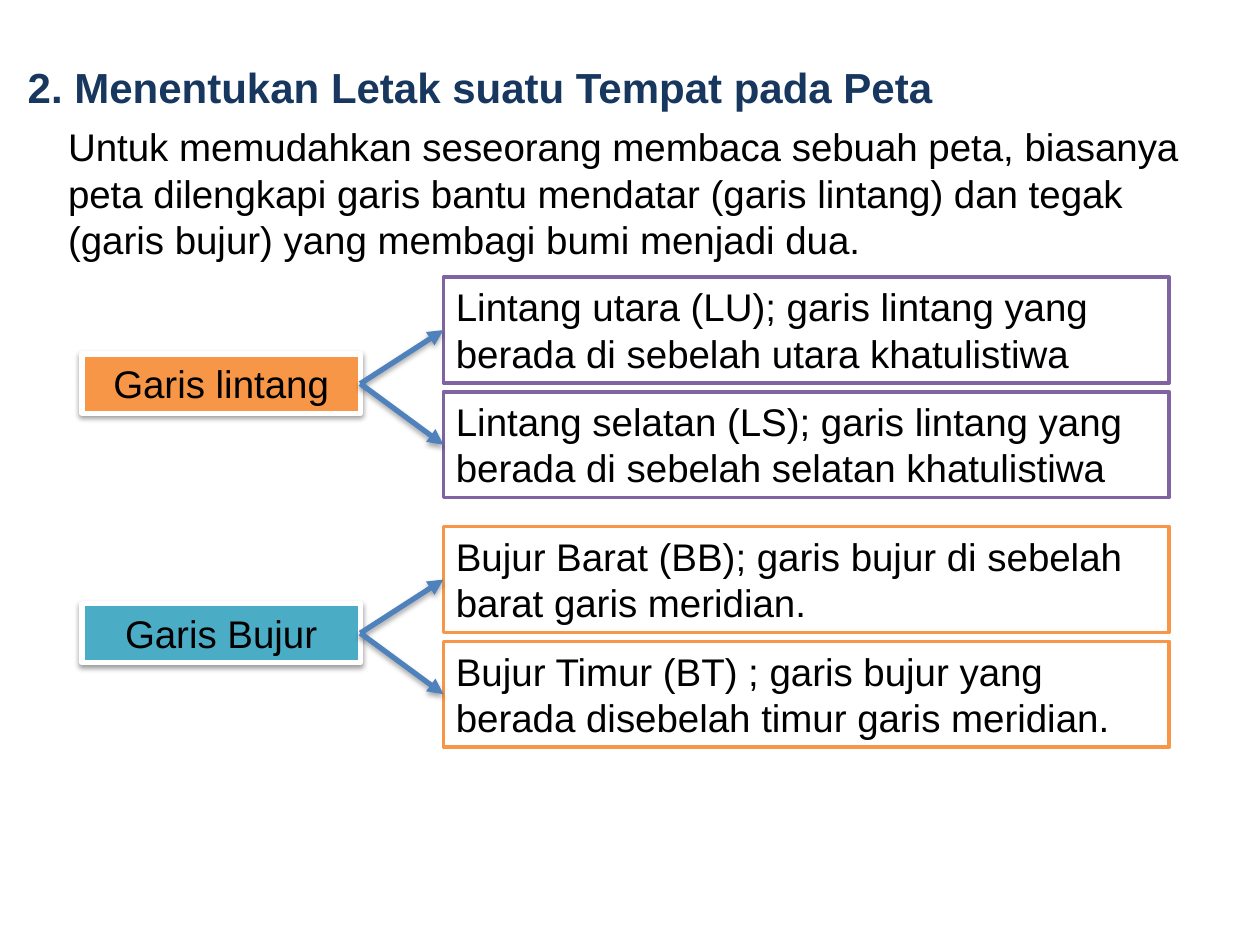
from lxml.etree import SubElement
from pptx import Presentation
from pptx.dml.color import RGBColor
from pptx.enum.shapes import MSO_CONNECTOR, MSO_SHAPE
from pptx.enum.text import MSO_ANCHOR, MSO_AUTO_SIZE, PP_ALIGN
from pptx.oxml.ns import qn
from pptx.util import Inches, Pt

COLORS = {
    "title": "17375E", "text": "000000", "white": "FFFFFF", "arrow": "4F81BD",
    "purple": "8064A2", "orange": "F79646", "teal": "4BACC6", "shadow": "000000",
}
FONT = "Arial"
LABEL_LEFT, LABEL_WIDTH, LABEL_HEIGHT = 0.65, 2.21, 0.47
BOX_LEFT, BOX_WIDTH, BOX_HEIGHT = 3.52, 5.76, 0.84
BOX_STEP = 0.91      # from one definition box to the next
LABEL_OFFSET = 0.61  # from the top of a group to its label

# Top, label, label colour, box border colour, definitions
GROUPS = [
    (2.2, "Garis lintang", "orange", "purple",
     ["Lintang utara (LU); garis lintang yang berada di sebelah utara khatulistiwa",
      "Lintang selatan (LS); garis lintang yang berada di sebelah selatan khatulistiwa"]),
    (4.18, "Garis Bujur", "teal", "orange",
     ["Bujur Barat (BB); garis bujur di sebelah barat garis meridian.",
      "Bujur Timur (BT) ; garis bujur yang berada disebelah timur garis meridian."]),
]


def rgb(name):
    return RGBColor.from_string(COLORS[name])


def write_text(shape, text, size=22, color="text", bold=False, align=PP_ALIGN.LEFT):
    text_frame = shape.text_frame
    text_frame.text = text
    text_frame.word_wrap = True
    text_frame.auto_size = MSO_AUTO_SIZE.NONE
    text_frame.vertical_anchor = MSO_ANCHOR.TOP
    paragraph = text_frame.paragraphs[0]
    paragraph.alignment = align
    paragraph.space_before = Pt(0)
    font = paragraph.runs[0].font
    font.name, font.size, font.bold = FONT, Pt(size), bold
    font.color.rgb = rgb(color)


def place(shape, left, top, width, height):
    shape.left, shape.top = Inches(left), Inches(top)
    shape.width, shape.height = Inches(width), Inches(height)


def add_soft_shadow(shape, distance, opacity):
    effects = SubElement(shape._element.spPr, qn("a:effectLst"))
    shadow = SubElement(effects, qn("a:outerShdw"), blurRad=str(Pt(3.1)),
                        dist=str(Pt(distance)), dir="5400000", rotWithShape="0")
    color = SubElement(shadow, qn("a:srgbClr"), val=COLORS["shadow"])
    SubElement(color, qn("a:alpha"), val=str(opacity * 1000))


def add_box(slide, left, top, width, height, fill, border, border_width):
    box = slide.shapes.add_shape(MSO_SHAPE.RECTANGLE, Inches(left), Inches(top),
                                 Inches(width), Inches(height))
    box.fill.solid()
    box.fill.fore_color.rgb = rgb(fill)
    box.line.color.rgb = rgb(border)
    box.line.width = Pt(border_width)
    return box


def add_label(slide, top, text, fill):
    label = add_box(slide, LABEL_LEFT, top, LABEL_WIDTH, LABEL_HEIGHT, fill, "white", 3)
    add_soft_shadow(label, 1.6, 38)
    write_text(label, text, align=PP_ALIGN.CENTER)


def add_definition(slide, top, text, border):
    box = add_box(slide, BOX_LEFT, top, BOX_WIDTH, BOX_HEIGHT, "white", border, 2)
    box.shadow.inherit = False
    write_text(box, text)


def add_arrow(slide, start_y, end_y):
    arrow = slide.shapes.add_connector(
        MSO_CONNECTOR.STRAIGHT, Inches(LABEL_LEFT + LABEL_WIDTH), Inches(start_y),
        Inches(BOX_LEFT), Inches(end_y))
    arrow.line.color.rgb = rgb("arrow")
    arrow.line.width = Pt(3)
    SubElement(arrow.line._get_or_add_ln(), qn("a:tailEnd"), type="triangle")
    add_soft_shadow(arrow, 1.8, 35)


def add_group(slide, top, label, label_color, border, definitions):
    label_top = top + LABEL_OFFSET
    add_label(slide, label_top, label, label_color)
    box_tops = [top + index * BOX_STEP for index in range(len(definitions))]
    for box_top, definition in zip(box_tops, definitions):
        add_definition(slide, box_top, definition, border)
    for box_top in box_tops:
        add_arrow(slide, label_top + LABEL_HEIGHT / 2, box_top + BOX_HEIGHT / 2)


def add_heading(slide):
    title, body = slide.placeholders
    place(title, 0.12, 0.44, 8.39, 0.5)
    write_text(title, "2. Menentukan Letak suatu Tempat pada Peta", 24, "title", True)

    # Introduction, without the bullet of the template
    place(body, 0.44, 0.93, 9.38, 1.21)
    write_text(body, "Untuk memudahkan seseorang membaca sebuah peta, biasanya peta "
                     "dilengkapi garis bantu mendatar (garis lintang) dan tegak "
                     "(garis bujur) yang membagi bumi menjadi dua.")
    properties = body.text_frame.paragraphs[0]._p.get_or_add_pPr()
    properties.set("marL", "0")
    properties.set("indent", "0")
    SubElement(properties, qn("a:buNone"))


def main():
    presentation = Presentation()
    presentation.slide_width, presentation.slide_height = Inches(10), Inches(7.5)
    slide = presentation.slides.add_slide(presentation.slide_layouts[1])
    add_heading(slide)
    for group in GROUPS:
        add_group(slide, *group)
    presentation.save("out.pptx")


if __name__ == "__main__":
    main()
